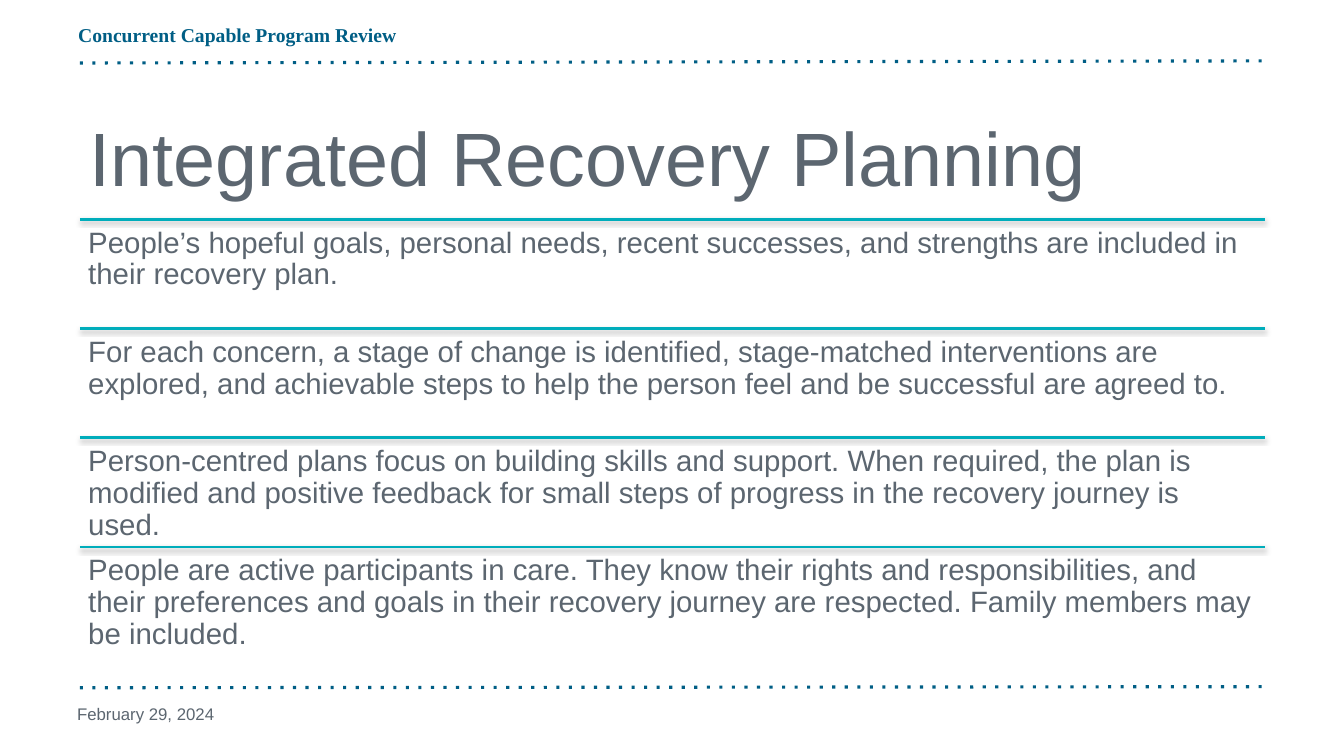
from dataclasses import dataclass

from lxml import etree
from pptx import Presentation
from pptx.dml.color import RGBColor
from pptx.enum.shapes import MSO_CONNECTOR
from pptx.enum.text import MSO_ANCHOR, PP_ALIGN
from pptx.oxml.ns import qn
from pptx.util import Pt

STRAIGHT = MSO_CONNECTOR.STRAIGHT
TOP, MIDDLE = MSO_ANCHOR.TOP, MSO_ANCHOR.MIDDLE
LEFT_ALIGN = PP_ALIGN.LEFT
EMU_PER_PX = 9525
TITLE_ONLY = 5
LEFT, RIGHT = 76, 1205
WIDTH = RIGHT - LEFT
ROWS_TOP, ROW_HEIGHT = 209, 104

PRACTICES = [
    "People’s hopeful goals, personal needs, recent successes, and strengths "
    "are included in their recovery plan.",
    "For each concern, a stage of change is identified, stage-matched "
    "interventions are explored, and achievable steps to help the person feel "
    "and be successful are agreed to.",
    "Person-centred plans focus on building skills and support. When required, "
    "the plan is modified and positive feedback for small steps of progress in "
    "the recovery journey is used.",
    "People are active participants in care. They know their rights and "
    "responsibilities, and their preferences and goals in their recovery "
    "journey are respected. Family members may be included.",
]


@dataclass(frozen=True)
class Theme:
    sans: str = "Arial"
    serif: str = "Times New Roman"
    blue: str = "005E85"
    teal: str = "00ADBB"
    grey: str = "5C6670"
    shadow: str = "000000"
    title: int = 54
    body: int = 21
    header: int = 14
    date: int = 12


THEME = Theme()


def px(n):
    return n * EMU_PER_PX


def place(sp, left, top, width, height):
    sp.left, sp.top, sp.width, sp.height = map(px, (left, top, width, height))


def write(sp, text, size, color=THEME.grey, font=THEME.sans, bold=False,
          anchor=TOP, spacing=1.0):
    tf = sp.text_frame
    tf.text = text
    tf.word_wrap = True
    tf.vertical_anchor = anchor
    p = tf.paragraphs[0]
    p.alignment = LEFT_ALIGN
    p.line_spacing = spacing
    f = p.runs[0].font
    f.name, f.size, f.bold = font, Pt(size), bold
    f.color.rgb = RGBColor.from_string(color)


def add_text(s, box, text, size, inset=None, **style):
    sp = s.shapes.add_textbox(*map(px, box))
    write(sp, text, size, **style)
    if inset is not None:
        tf = sp.text_frame
        tf.margin_left = tf.margin_right = px(inset)
        tf.margin_top = tf.margin_bottom = px(inset)


def add_line(s, y1, y2, color, weight):
    line = s.shapes.add_connector(STRAIGHT, px(LEFT), px(y1), px(RIGHT), px(y2))
    line.line.color.rgb = RGBColor.from_string(color)
    line.line.width = Pt(weight)
    effects = etree.SubElement(line._element.spPr, qn("a:effectLst"))
    return line, effects


def add_dotted_line(s, y1, y2):
    line, _ = add_line(s, y1, y2, THEME.blue, 2.25)
    ln = line.line._get_or_add_ln()
    etree.SubElement(ln, qn("a:prstDash"), val="dot")


def add_row_rule(s, y):
    _, effects = add_line(s, y, y, THEME.teal, 2)
    shadow = etree.SubElement(effects, qn("a:outerShdw"), blurRad="40000",
                              dist="20000", dir="5400000", rotWithShape="0")
    color = etree.SubElement(shadow, qn("a:srgbClr"), val=THEME.shadow)
    etree.SubElement(color, qn("a:alpha"), val="38000")


def add_practice(s, index, text):
    y = ROWS_TOP + index * ROW_HEIGHT
    add_row_rule(s, y)
    add_text(s, (LEFT, y, WIDTH, ROW_HEIGHT), text, THEME.body,
             inset=8, spacing=0.9)


def main():
    prs = Presentation()
    prs.slide_width, prs.slide_height = px(1280), px(720)
    s = prs.slides.add_slide(prs.slide_layouts[TITLE_ONLY])
    add_dotted_line(s, 60, 58)
    add_dotted_line(s, 655, 654)
    add_text(s, (65, 20, 968, 32), "Concurrent Capable Program Review",
             THEME.header, color=THEME.blue, font=THEME.serif, bold=True,
             spacing=0.9)
    add_text(s, (64, 661, 299, 38), "February 29, 2024", THEME.date,
             anchor=MIDDLE)
    title = s.shapes.title
    place(title, LEFT, 89, WIDTH, 120)
    write(title, "Integrated Recovery Planning", THEME.title, anchor=MIDDLE)
    for index, text in enumerate(PRACTICES):
        add_practice(s, index, text)
    prs.save("out.pptx")


if __name__ == "__main__":
    main()
